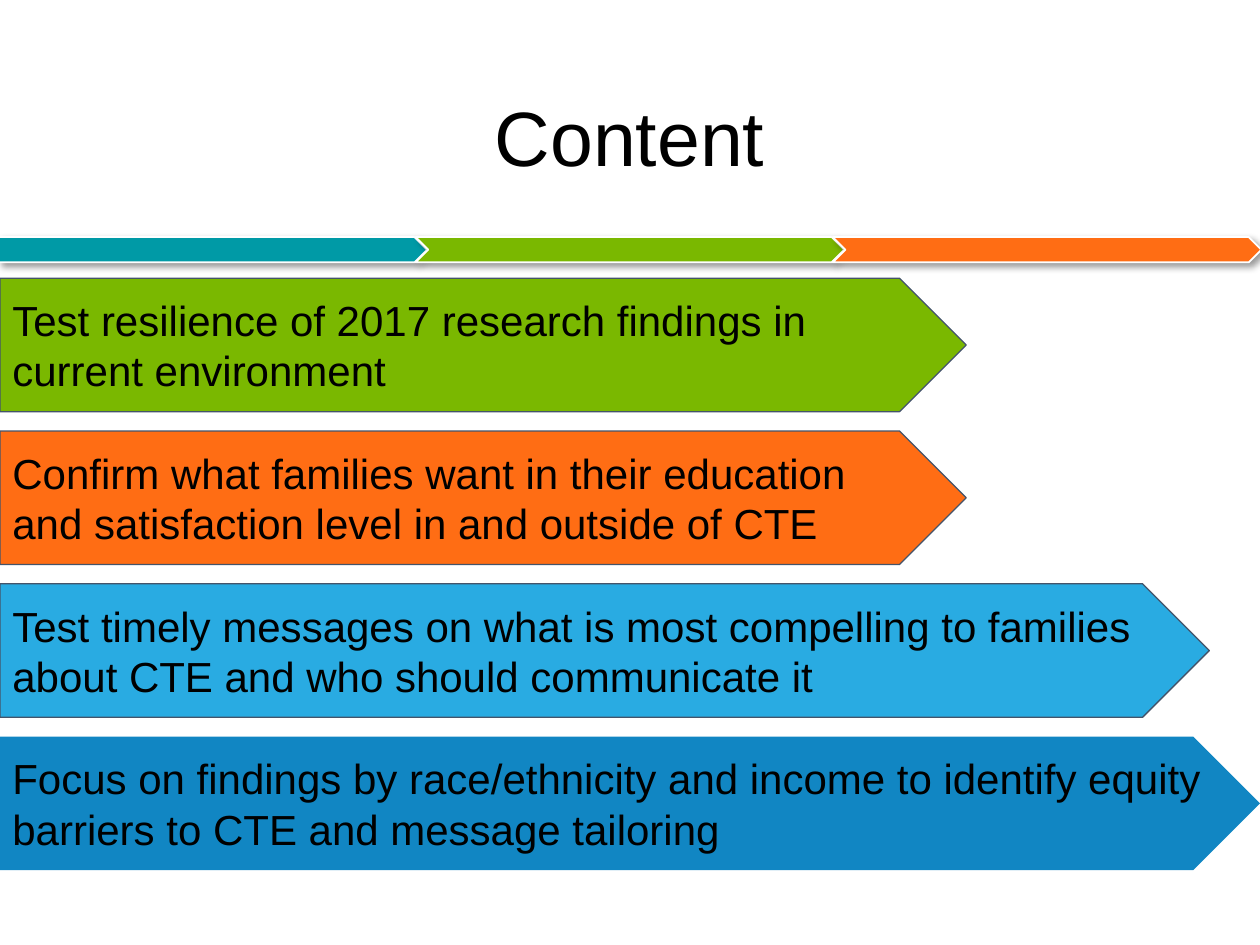
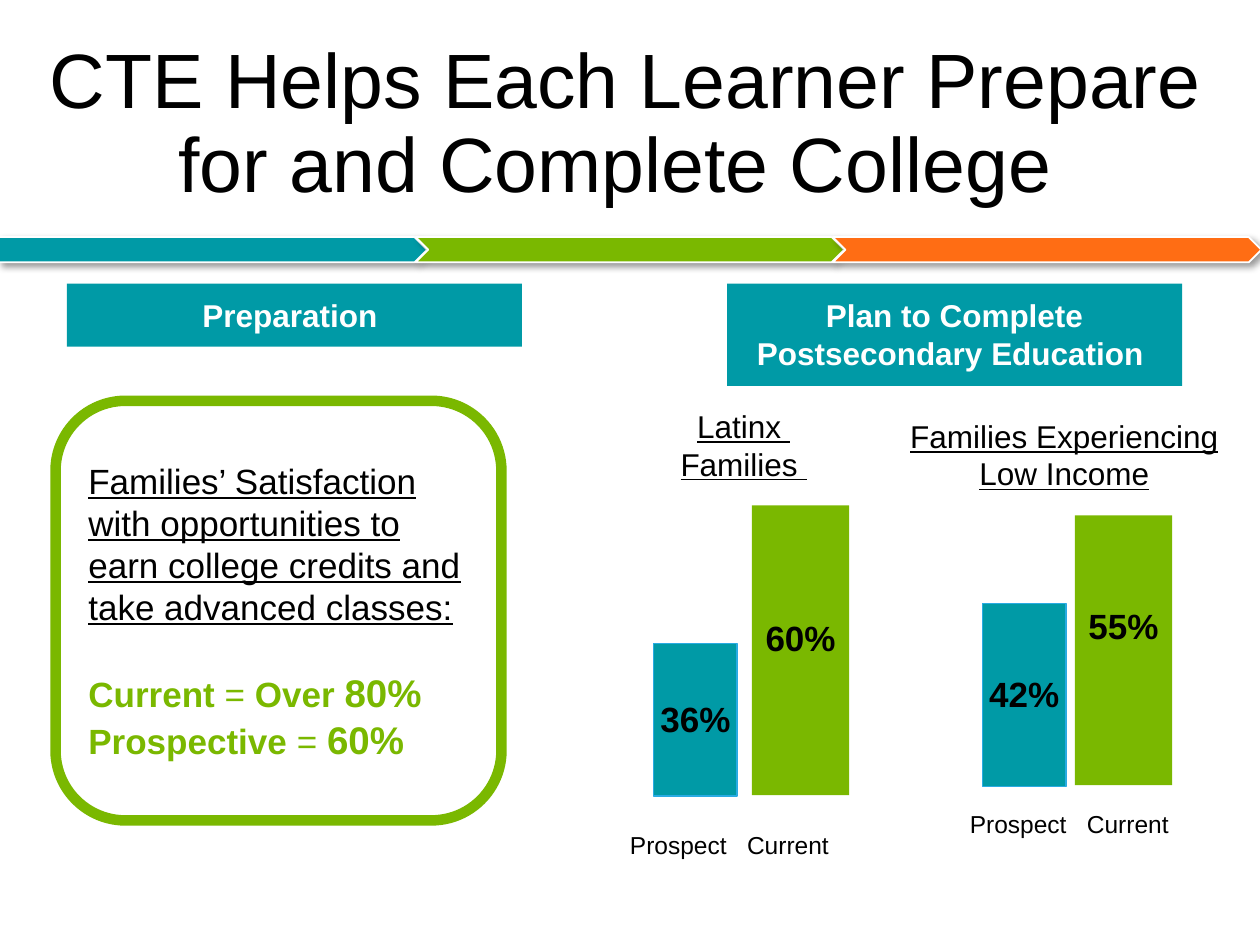
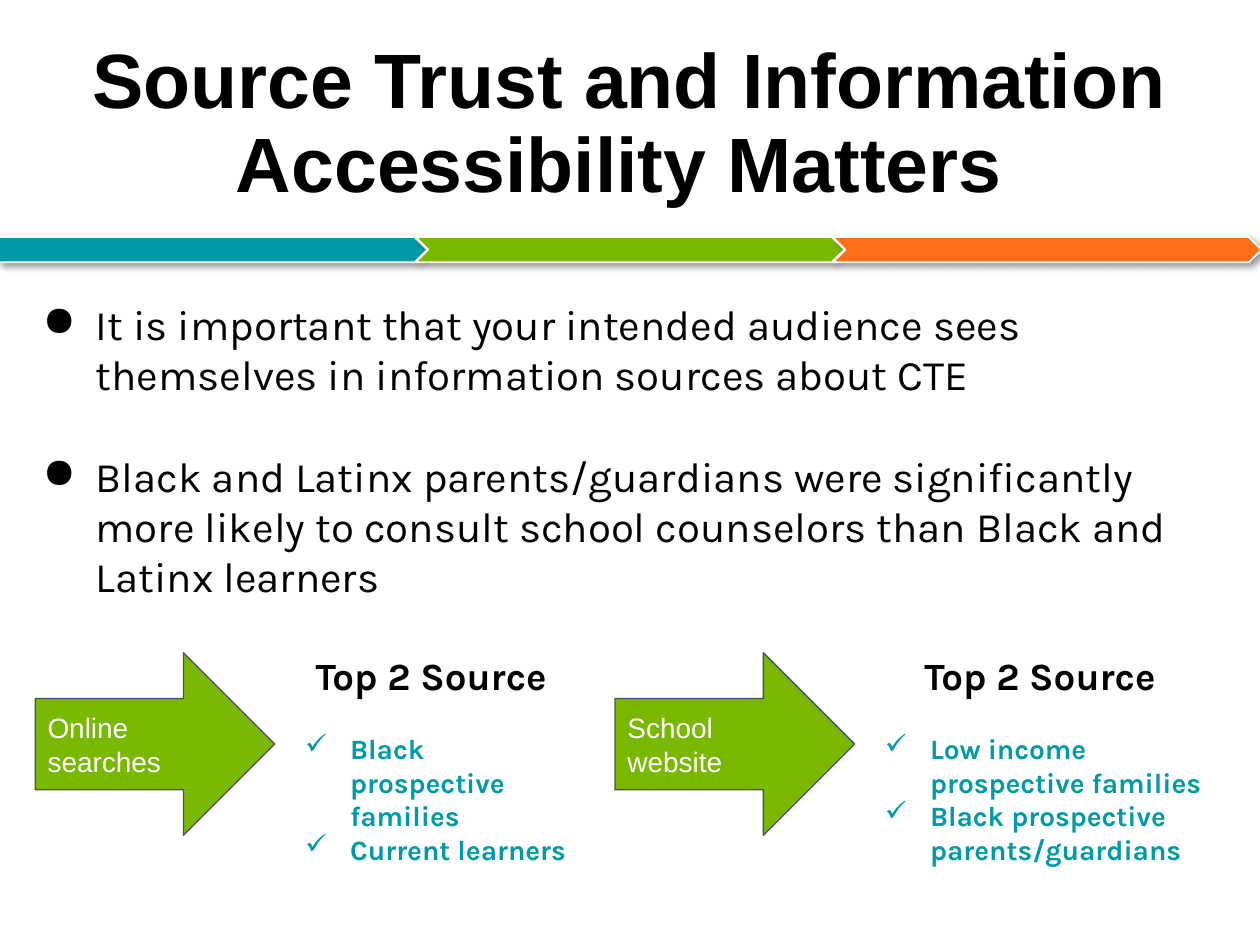
from lxml import etree
from pptx import Presentation
from pptx.dml.color import RGBColor
from pptx.enum.shapes import MSO_SHAPE
from pptx.enum.text import MSO_ANCHOR, MSO_AUTO_SIZE, PP_ALIGN
from pptx.oxml.ns import qn
from pptx.util import Cm, Pt

PLATE = MSO_SHAPE.PENTAGON
NOTCH = MSO_SHAPE.CHEVRON
RECT = MSO_SHAPE.RECTANGLE
ROUND = MSO_SHAPE.ROUNDED_RECTANGLE
ARROW = MSO_SHAPE.RIGHT_ARROW
TOP, MID = MSO_ANCHOR.TOP, MSO_ANCHOR.MIDDLE
LEFT, CENTER = PP_ALIGN.LEFT, PP_ALIGN.CENTER

HUES = {
    "black": "000000",
    "white": "FFFFFF",
    "teal": "009AA6",
    "green": "7AB800",
    "orange": "FF6D14",
    "sky": "29ABE2",
    "blue": "1186C3",
    "slate": "44546A",
}


def hue(name):
    return RGBColor.from_string(HUES[name])


def add(parent, tag, **attrs):
    node = etree.SubElement(parent, qn(tag))
    for key, value in attrs.items():
        node.set(key, str(value))
    return node


class Deck:
    def __init__(self):
        self.prs = Presentation()
        self.prs.slide_width, self.prs.slide_height = Cm(25.4), Cm(19.05)
        self.layout = self.prs.slide_layouts[5]
        self.slide = None

    def start(self, title, box, bold=False):
        self.slide = self.prs.slides.add_slide(self.layout)
        head = self.slide.shapes.title
        head.left, head.top, head.width, head.height = map(Cm, box)
        self.frame(head, MID, 0.13)
        par = self.para(head, CENTER)
        par.line_spacing = 0.9
        self.run(par, title, 44, bold=bold)

    def band(self):
        for i, (kind, fill) in enumerate(
            [(PLATE, "teal"), (NOTCH, "green"), (NOTCH, "orange")]
        ):
            part = self.shape(kind, (-0.03 + 8.41 * i, 4.78, 8.64, 0.51), fill, "white", 1)
            glow = part.element.spPr.find(qn("a:effectLst"))
            cast = add(glow, "a:outerShdw", blurRad=Pt(4), dist=Pt(3), dir=45 * 60000)
            tint = add(cast, "a:srgbClr", val=HUES["black"])
            add(tint, "a:alpha", val=40000)
            part.element.nvSpPr.cNvPr.id = 20 + i
            self.layout.shapes.element.append(part.element)

    def shape(self, kind, box, fill, line=None, weight=0.75, anchor=MID):
        item = self.slide.shapes.add_shape(kind, *map(Cm, box))
        item.shadow.inherit = False
        item.fill.solid()
        item.fill.fore_color.rgb = hue(fill)
        if line:
            item.line.color.rgb = hue(line)
            item.line.width = Pt(weight)
        else:
            item.line.fill.background()
        self.frame(item, anchor)
        return item

    def text(self, box):
        item = self.slide.shapes.add_textbox(*map(Cm, box))
        self.frame(item, TOP)
        return item

    def frame(self, item, anchor, pad=0.25):
        body = item.text_frame
        body.word_wrap = True
        body.auto_size = MSO_AUTO_SIZE.NONE
        body.vertical_anchor = anchor
        body.margin_left = body.margin_right = Cm(0.25)
        body.margin_top = body.margin_bottom = Cm(pad)

    def para(self, item, align=LEFT, before=0):
        body = item.text_frame
        par = body.paragraphs[0]
        if par.runs:
            par = body.add_paragraph()
        par.alignment = align
        if before:
            par.space_before = Pt(before)
        return par

    def run(self, par, text, size, color="black", bold=False, under=False, face="Arial"):
        run = par.add_run()
        run.text = text
        font = run.font
        font.name, font.size = face, Pt(size)
        font.bold, font.underline = bold, under
        font.color.rgb = hue(color)

    def say(self, item, lines, size, align=LEFT, **look):
        for line in lines:
            self.run(self.para(item, align), line, size, **look)

    def point(self, item, mark, hang, text, size, color="black", before=0, bold=False):
        par = self.para(item, before=before)
        props = par._p.get_or_add_pPr()
        props.set("marL", str(Cm(1.27)))
        props.set("indent", str(-Cm(hang)))
        add(add(props, "a:buClr"), "a:srgbClr", val=HUES[color])
        add(props, "a:buChar", char=mark)
        self.run(par, text, size, color, bold, face="Karla")

    def pair(self, box, words):
        par = self.para(self.text(box))
        stops = add(par._p.get_or_add_pPr(), "a:tabLst")
        add(stops, "a:tab", pos=Cm(2.36), algn="l")
        self.run(par, "\t".join(words), 14)

    def bar(self, box, fill, line, label, top):
        self.shape(RECT, box, fill, line)
        wide = 2.18
        spot = self.text((box[0] + (box[2] - wide) / 2, top, wide, 1.37))
        self.say(spot, [label], 20, CENTER, bold=True)


def goals(deck):
    deck.start("Content", (1.75, 1.02, 21.89, 3.68))
    deck.band()
    rows = [
        (19.48, "green", "slate",
         ["Test resilience of 2017 research findings in current environment"]),
        (19.48, "orange", "slate",
         ["Confirm what families want in their education",
          "and satisfaction level in and outside of CTE"]),
        (24.38, "sky", "slate",
         ["Test timely messages on what is most compelling to families "
          "about CTE and who should communicate it"]),
        (25.4, "blue", None,
         ["Focus on findings by race/ethnicity and income to identify equity "
          "barriers to CTE and message tailoring"]),
    ]
    for i, (wide, fill, line, lines) in enumerate(rows):
        plate = deck.shape(PLATE, (0, 5.61 + 3.08 * i, wide, 2.69), fill, line)
        deck.say(plate, lines, 24)


def college(deck):
    deck.start("CTE Helps Each Learner Prepare for and Complete College ",
               (0.2, 0.69, 24.84, 3.68))
    for left, high, label in [
        (1.35, 1.27, "Preparation "),
        (14.66, 2.06, "Plan to Complete Postsecondary Education "),
    ]:
        tag = deck.shape(RECT, (left, 5.72, 9.17, high), "teal", anchor=TOP)
        deck.say(tag, [label], 18, CENTER, color="white", bold=True)

    card = deck.shape(ROUND, (1.12, 8.08, 8.99, 8.46), "white", "green", 6)
    deck.say(card, ["Families’ Satisfaction with opportunities to earn college "
                    "credits and take advanced classes:"], 20, under=True)
    par = deck.para(card, before=24)
    for text, size, bold in [
        ("Current", 20, True), (" = ", 20, False), ("Over ", 20, True),
        ("80% ", 22, True), ("Prospective", 20, True), (" = ", 20, False),
        ("60%", 22, True),
    ]:
        deck.run(par, text, size, "green", bold)

    groups = [
        (["Latinx ", "Families "], (12.12, 7.95, 5.74, 2.06),
         ("36%", (13.18, 12.98, 1.68, 3.07), 13.82),
         ("60%", (15.16, 10.19, 1.96, 5.84), 12.17),
         (12.45, 16.48, 5.74, 1.12)),
        (["Families Experiencing Low Income"], (17.86, 8.15, 7.19, 2.06),
         ("42%", (19.81, 12.17, 1.68, 3.68), 13.31),
         ("55%", (21.67, 10.39, 1.96, 5.44), 11.94),
         (19.3, 16.05, 4.72, 1.12)),
    ]
    for lines, head, low, high, foot in groups:
        deck.say(deck.text(head), lines, 18, CENTER, under=True)
        for (label, box, top), fill, line in [(low, "teal", "sky"), (high, "green", None)]:
            deck.bar(box, fill, line, label, top)
        deck.pair(foot, ["Prospect", "Current"])


def trust(deck):
    deck.start("Source Trust and Information Accessibility Matters ",
               (0.71, 0.69, 23.98, 3.68), bold=True)
    body = deck.text((0.41, 5.77, 24.59, 6.68))
    for i, line in enumerate([
        "It is important that your intended audience sees themselves in "
        "information sources about CTE",
        "Black and Latinx parents/guardians were significantly more likely to "
        "consult school counselors than Black and Latinx learners",
    ]):
        deck.point(body, "●", 1.07, line, 24, before=29 * i)

    for i, (name, wide, high, lines) in enumerate([
        ("Online searches", 6.3, 4.19,
         ["Black prospective families", "Current learners"]),
        ("School website", 7.47, 4.88,
         ["Low income prospective families", "Black prospective parents/guardians"]),
    ]):
        shift = 11.69 * i
        arrow = deck.shape(ARROW, (0.71 + shift, 13.16, 4.83, 3.68), "green", "slate")
        deck.say(arrow, [name], 16, color="white")
        note = deck.text((5.54 + shift, 12.9, wide, high))
        deck.say(note, ["Top 2 Source"], 22, CENTER, bold=True, face="Karla")
        for j, line in enumerate(lines):
            deck.point(note, "✓", 0.91, line, 16, "teal", 0 if j else 19, True)


def main():
    deck = Deck()
    goals(deck)
    college(deck)
    trust(deck)
    deck.prs.save("out.pptx")


if __name__ == "__main__":
    main()
